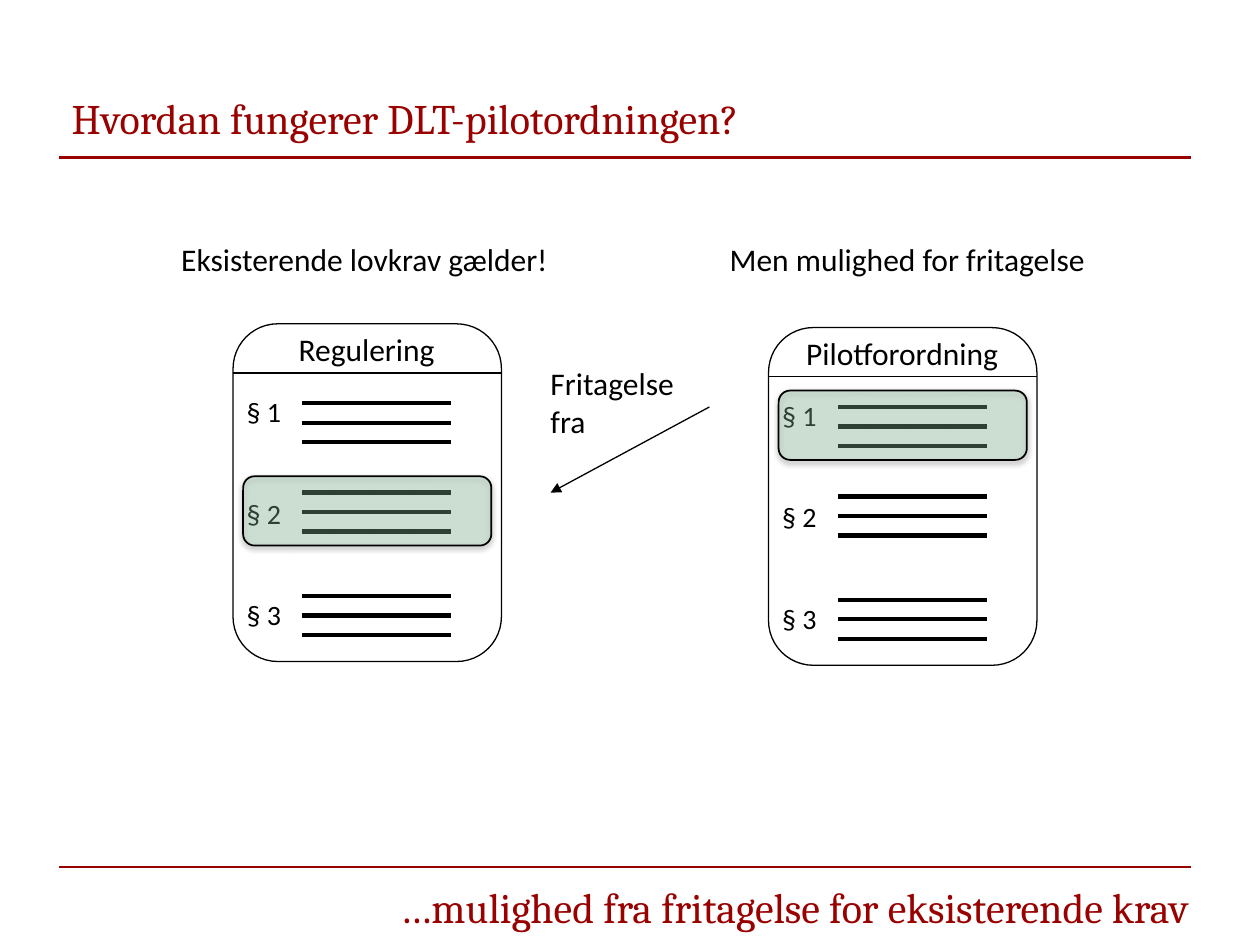
import pptx
import pptx.dml.color
import pptx.enum.shapes
import pptx.enum.text
import pptx.oxml
import pptx.oxml.ns
import pptx.util
from pptx.util import Inches

COLORS = {"red": "990000", "black": "000000", "green": "9BD2AA"}
ALIGN = pptx.enum.text.PP_ALIGN
ANCHOR = pptx.enum.text.MSO_ANCHOR
NAMESPACE = pptx.oxml.ns.nsdecls("a")

CARD_WIDTH, CARD_HEIGHT = 2.13, 2.68
SECTION_OFFSETS = (0.63, 1.34, 2.16)  # first stripe of each section, from card top
STRIPE_GAP = 0.155


def rgb(name):
    return pptx.dml.color.RGBColor.from_string(COLORS[name])


def add_text(slide, left, top, width, height, paragraphs, size=18, font="Calibri",
             color="black", align=ALIGN.LEFT, anchor=ANCHOR.TOP, gap=0):
    """Add a text box; gap is the space in points between its paragraphs."""
    box = slide.shapes.add_textbox(Inches(left), Inches(top), Inches(width), Inches(height))
    frame = box.text_frame
    frame.word_wrap = True
    frame.vertical_anchor = anchor
    for index, text in enumerate(paragraphs):
        paragraph = frame.add_paragraph() if index else frame.paragraphs[0]
        paragraph.alignment = align
        if index:
            paragraph.space_before = pptx.util.Pt(gap)
        run = paragraph.add_run()
        run.text = text
        run.font.size = pptx.util.Pt(size)
        run.font.name = font
        run.font.color.rgb = rgb(color)


def add_line(slide, start, end, weight, color="black", arrow=False):
    line = slide.shapes.add_connector(
        pptx.enum.shapes.MSO_CONNECTOR.STRAIGHT,
        Inches(start[0]), Inches(start[1]), Inches(end[0]), Inches(end[1]))
    line.line.width = pptx.util.Pt(weight)
    line.line.color.rgb = rgb(color)
    if arrow:
        line.line._get_or_add_ln().append(
            pptx.oxml.parse_xml(f'<a:tailEnd {NAMESPACE} type="triangle"/>'))
    line._element.spPr.append(pptx.oxml.parse_xml(f"<a:effectLst {NAMESPACE}/>"))


def add_rounded_box(slide, left, top, width, height, weight):
    shape = slide.shapes.add_shape(
        pptx.enum.shapes.MSO_SHAPE.ROUNDED_RECTANGLE,
        Inches(left), Inches(top), Inches(width), Inches(height))
    shape.shadow.inherit = False
    shape.fill.background()
    shape.line.width = pptx.util.Pt(weight)
    shape.line.color.rgb = rgb("black")
    return shape


def add_highlight(slide, left, top):
    """Add a see-through green marker with a soft shadow below it."""
    shape = add_rounded_box(slide, left, top, 1.97, 0.55, 1)
    shape.fill.solid()
    shape.fill.fore_color.rgb = rgb("green")
    properties = shape._element.spPr
    fill_color = properties.find(pptx.oxml.ns.qn("a:solidFill"))[0]
    fill_color.append(pptx.oxml.parse_xml(f'<a:alpha {NAMESPACE} val="30000"/>'))
    properties.find(pptx.oxml.ns.qn("a:effectLst")).append(pptx.oxml.parse_xml(
        f'<a:outerShdw {NAMESPACE} blurRad="40000" dist="20000" dir="5400000" '
        f'rotWithShape="0"><a:srgbClr val="{COLORS["black"]}">'
        '<a:alpha val="38000"/></a:srgbClr></a:outerShdw>'))


def add_card(slide, left, top, title, marked_section):
    """Add a law document with three sections, one of them highlighted."""
    add_rounded_box(slide, left, top, CARD_WIDTH, CARD_HEIGHT, 0.75)
    add_line(slide, (left, top + 0.39), (left + CARD_WIDTH, top + 0.39), 0.75)
    add_text(slide, left + 0.19, top, 1.74, 0.4, [title], align=ALIGN.CENTER)
    add_text(slide, left + 0.01, top + 0.51, 0.63, 1.99,
             ["§ 1", "§ 2", "§ 3"], size=16, gap=39)
    for offset in SECTION_OFFSETS:
        for stripe in range(3):
            y = top + offset + stripe * STRIPE_GAP
            add_line(slide, (left + 0.55, y), (left + 1.73, y), 2.5)
    add_highlight(slide, left + 0.08, top + SECTION_OFFSETS[marked_section - 1] - 0.13)


def main():
    presentation = pptx.Presentation()
    presentation.slide_width = Inches(10)
    presentation.slide_height = Inches(7.5)
    slide = presentation.slides.add_slide(presentation.slide_layouts[6])

    # Title and closing line with their rules
    for y in (1.25, 6.88):
        add_line(slide, (0.47, y), (9.45, y), 1.25, "red")
    add_text(slide, 0.47, 0.59, 9, 0.69, ["Hvordan fungerer DLT-pilotordningen?"],
             size=24, font="Cambria", color="red", anchor=ANCHOR.MIDDLE)
    add_text(slide, 0.47, 6.95, 9.06, 0.47,
             ["…mulighed fra fritagelse for eksisterende krav"],
             size=24, font="Cambria", color="red", align=ALIGN.RIGHT)

    # The two documents
    add_card(slide, 1.85, 2.57, "Regulering", marked_section=2)
    add_card(slide, 6.1, 2.6, "Pilotforordning", marked_section=1)

    # Headings above the documents
    add_text(slide, 1.34, 1.86, 3.14, 0.4, ["Eksisterende lovkrav gælder!"])
    add_text(slide, 5.61, 1.86, 3.1, 0.4, ["Men mulighed for fritagelse"], align=ALIGN.RIGHT)

    # Exemption arrow
    add_line(slide, (5.63, 3.23), (4.37, 3.91), 0.75, arrow=True)
    add_text(slide, 4.27, 2.84, 1.42, 0.71, ["Fritagelse fra"])

    presentation.save("out.pptx")


if __name__ == "__main__":
    main()
